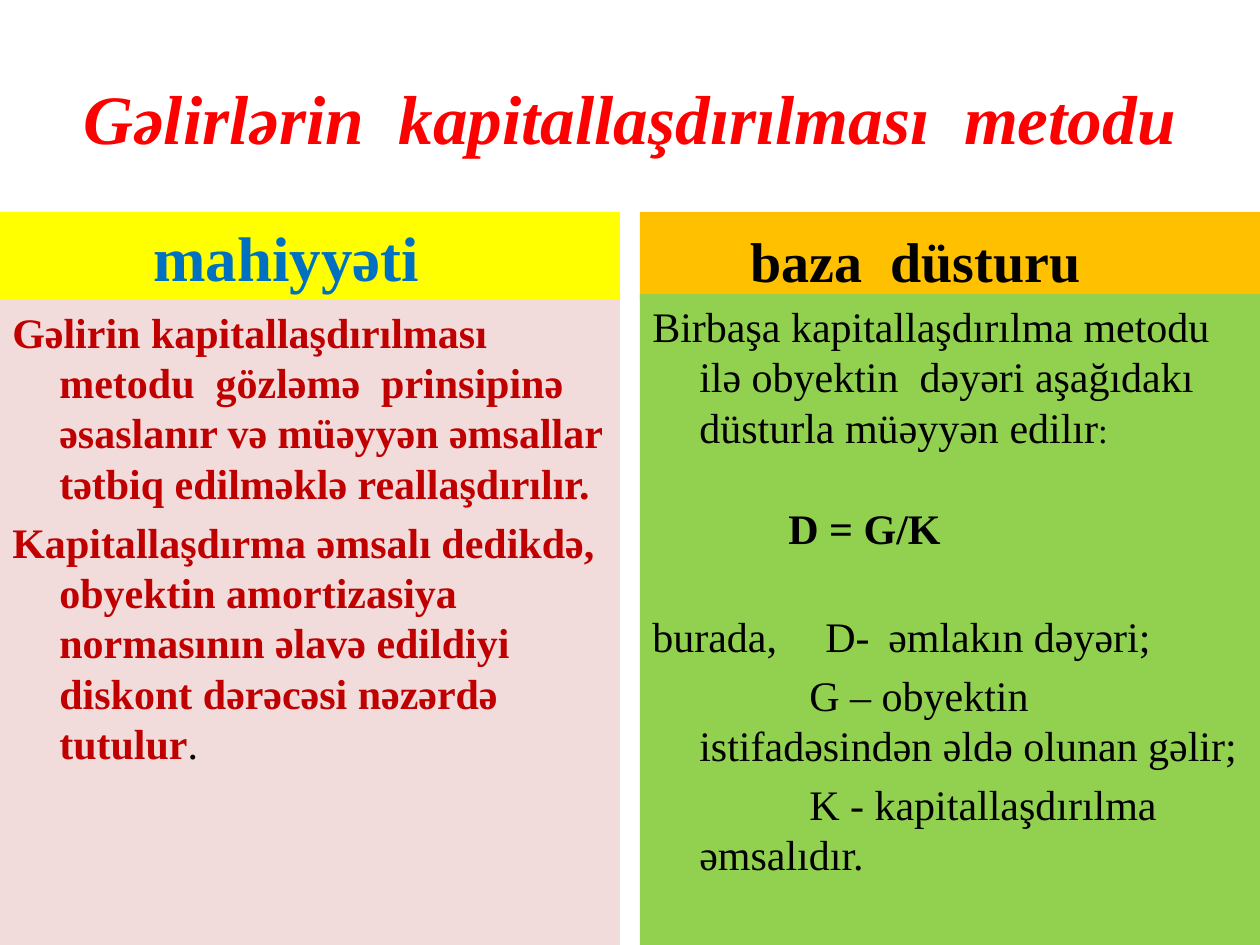
from pptx import Presentation
from pptx import util as u
from pptx.dml.color import RGBColor
from pptx.enum import shapes, text
from pptx.oxml import parse_xml
from pptx.oxml.ns import nsdecls

FONT = "Times New Roman"
COLORS = {
    "red": "FF0000", "yellow": "FFFF00", "blue": "0070C0", "black": "000000",
    "pink": "F2DCDB", "wine": "C00000", "orange": "FFC000", "green": "92D050",
}
WIDE, HIGH = 1260, 945
COL, RIGHT = 620, 640
HEAD_TOP, HEAD_HIGH = 212, 88
HANG = dict(left=47, first=-47)
ENTRY = dict(left=47, first=110)


def px(n):
    return u.Emu(round(n * 914400 / 126))


def tone(name):
    return RGBColor.from_string(COLORS[name])


def add_box(slide, left, top, wide, high, anchor, fill=None):
    box = slide.shapes.add_shape(
        shapes.MSO_SHAPE.RECTANGLE, px(left), px(top), px(wide), px(high))
    box.shadow.inherit = False
    box.line.fill.background()
    if fill:
        box.fill.solid()
        box.fill.fore_color.rgb = tone(fill)
    else:
        box.fill.background()
    frame = box.text_frame
    frame.word_wrap = True
    frame.vertical_anchor = anchor
    return frame


def set_indent(para, left=0, first=0, tabs=()):
    """Set the left margin, first-line offset and tab stops in px."""
    props = para._p.get_or_add_pPr()
    props.set("marL", str(px(left)))
    props.set("indent", str(px(first)))
    if tabs:
        stops = "".join(f'<a:tab pos="{px(t)}" algn="l"/>' for t in tabs)
        props.append(parse_xml(f'<a:tabLst {nsdecls("a")}>{stops}</a:tabLst>'))


def add_run(para, words, color="black", **form):
    run = para.add_run()
    run.text = words
    run.font.color.rgb = tone(color)
    for key, value in {"name": FONT, **form}.items():
        setattr(run.font, key, value)


def fill_text(frame, paras, align=text.PP_ALIGN.LEFT):
    """Write (runs, indent, points before) paragraphs into a frame."""
    for i, (runs, indent, before) in enumerate(paras):
        para = frame.add_paragraph() if i else frame.paragraphs[0]
        para.alignment = align
        para.space_before = u.Pt(before)
        set_indent(para, **indent)
        for words, form in runs:
            add_run(para, words, **form)


def add_title(slide):
    frame = add_box(slide, 63, 38, 1134, 158, text.MSO_ANCHOR.MIDDLE)
    form = dict(color="red", size=u.Pt(39.6), bold=True, italic=True)
    words = "Gəlirlərin  kapitallaşdırılması  metodu"
    fill_text(frame, [([(words, form)], {}, 0)], text.PP_ALIGN.CENTER)


def add_head(slide, left, words, fill, color, size, indent):
    frame = add_box(slide, left, HEAD_TOP, COL, HEAD_HIGH,
                    text.MSO_ANCHOR.BOTTOM, fill)
    form = dict(color=color, size=u.Pt(size), bold=True)
    fill_text(frame, [([(words, form)], dict(left=indent), 0)])


def add_body(slide, left, top, fill, paras):
    frame = add_box(slide, left, top, COL, HIGH - top,
                    text.MSO_ANCHOR.TOP, fill)
    fill_text(frame, paras)


def main():
    deck = Presentation()
    deck.slide_width, deck.slide_height = px(WIDE), px(HIGH)
    slide = deck.slides.add_slide(deck.slide_layouts[6])

    plain = dict(size=u.Pt(24), bold=False)
    bold = dict(size=u.Pt(24), bold=True)
    wine = dict(bold, color="wine")
    small = dict(size=u.Pt(20), bold=False)

    add_title(slide)
    add_head(slide, 0, "mahiyyəti", "yellow", "blue", 36, 141)
    add_body(slide, 0, 300, "pink", [
        ([("Gəlirin kapitallaşdırılması metodu  gözləmə  prinsipinə əsaslanır "
           "və müəyyən əmsallar tətbiq edilməklə reallaşdırılır.", wine)],
         HANG, 4.8),
        ([("Kapitallaşdırma əmsalı dedikdə, obyektin amortizasiya normasının "
           "əlavə edildiyi diskont dərəcəsi nəzərdə tutulur", wine),
          (".", plain)], HANG, 4.8),
    ])
    add_head(slide, RIGHT, "baza  düsturu", "orange", "black", 32, 98)
    add_body(slide, RIGHT, 294, "green", [
        ([("Birbaşa kapitallaşdırılma metodu ilə obyektin  dəyəri aşağıdakı "
           "düsturla müəyyən edilır", plain), (":", small)], HANG, 4.8),
        ([("D = G/K", bold)], dict(left=136), 29),
        ([("burada,\tD-\təmlakın dəyəri;", plain)],
         dict(HANG, tabs=(156, 242)), 33),
        ([("G – obyektin istifadəsindən əldə olunan gəlir;", plain)],
         ENTRY, 4.8),
        ([("K - kapitallaşdırılma əmsalıdır.", plain)], ENTRY, 4.8),
    ])
    deck.save("out.pptx")


if __name__ == "__main__":
    main()
